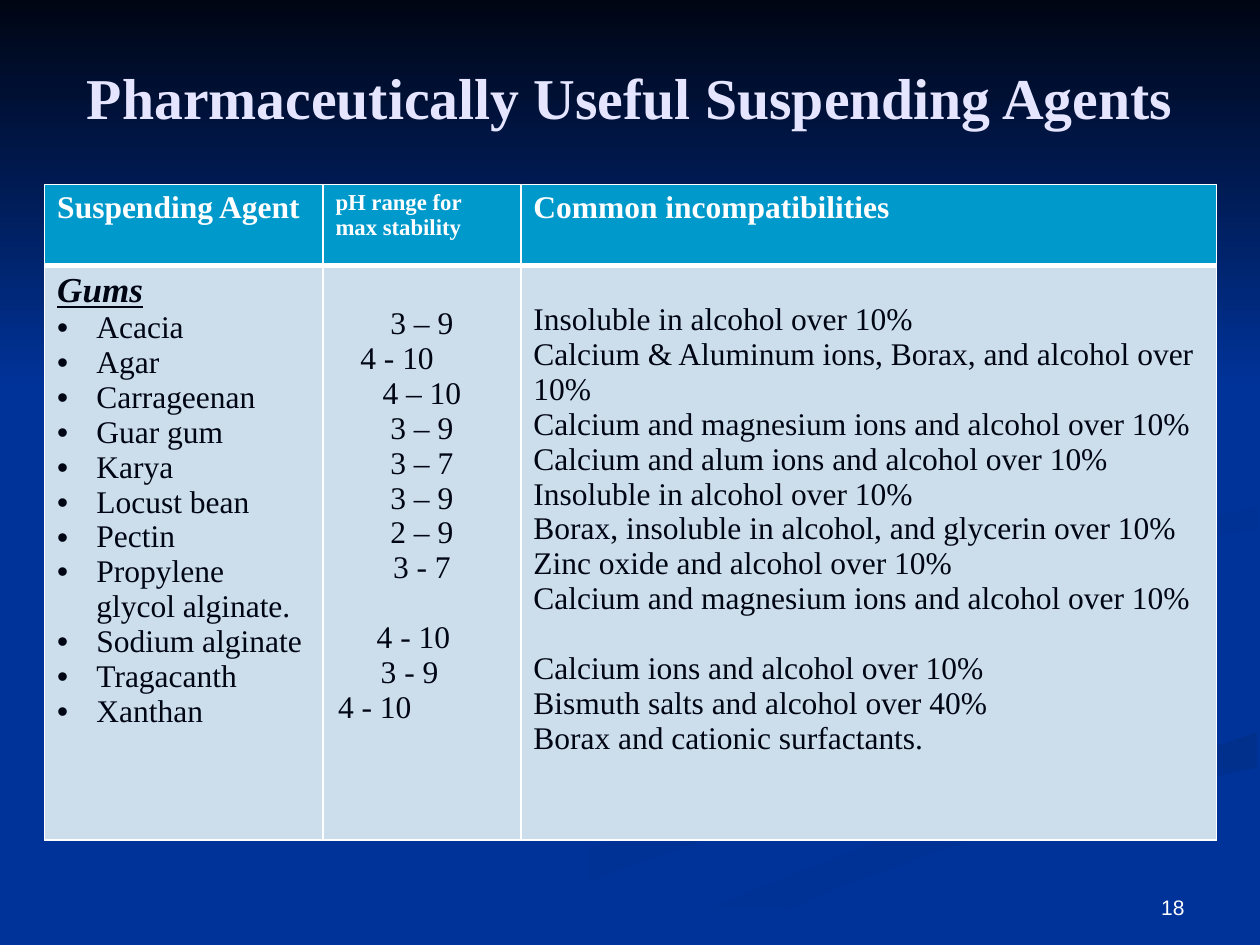
import pptx
import pptx.dml.color
import pptx.enum.dml
import pptx.enum.shapes
import pptx.enum.text
import pptx.oxml
import pptx.oxml.ns
import pptx.util
from pptx.util import Cm, Pt

SERIF = "Times New Roman"
WHITE, INK, TITLE = "FFFFFF", "000514", "E5E5FF"
NAVY, TEAL, PALE = "003399", "0099CC", "CCDEEC"
ALIGN = pptx.enum.text.PP_ALIGN
ANCHOR = pptx.enum.text.MSO_ANCHOR
LINE = 19.9  # height in points of one 18 pt line

HEADERS = [("Suspending Agent", 18), ("pH range for max stability", 13),
           ("Common incompatibilities", 18)]
GUMS = ["Acacia", "Agar", "Carrageenan", "Guar gum", "Karya", "Locust bean",
        "Pectin", "Propylene glycol alginate.", "Sodium alginate",
        "Tragacanth", "Xanthan"]
# Range and left indent in cm; None means centred
PH_RANGES = [("3 – 9", None), ("4 - 10", 0.5), ("4 – 10", None),
             ("3 – 9", None), ("3 – 7", None), ("3 – 9", None),
             ("2 – 9", None), ("3 - 7", None), ("4 - 10", 0.83),
             ("3 - 9", 0.91), ("4 - 10", 0.05)]
INCOMPATIBILITIES = [
    "Insoluble in alcohol over 10%",
    "Calcium & Aluminum ions, Borax, and alcohol over 10%",
    "Calcium and magnesium ions and alcohol over 10%",
    "Calcium and alum ions and alcohol over 10%",
    "Insoluble in alcohol over 10%",
    "Borax, insoluble in alcohol, and glycerin over 10%",
    "Zinc oxide and alcohol over 10%",
    "Calcium and magnesium ions and alcohol over 10%",
    "Calcium ions and alcohol over 10%",
    "Bismuth salts and alcohol over 40%",
    "Borax and cationic surfactants."]
AFTER_GAP = 8  # this entry follows the two-line gum name

# Backdrop outlines in cm: points, start colour, end colour, angle
BACKDROP = [
    ([(7.62, 19.02), (10.59, 17.53), (13.69, 16.48), (18.19, 15.47),
      (19.81, 14.83), (19.94, 14.38), (19.69, 14.04), (20.09, 14.12),
      (20.32, 14.76), (19.81, 15.37), (17.17, 16.1), (14.33, 16.89),
      (11.84, 17.78), (9.17, 19.02)], NAVY, "003193", 0),
    ([(12.78, 19.02), (15.21, 17.93), (17.68, 16.99), (20.24, 16.23),
      (23.77, 15.29), (25.35, 14.76), (25.35, 15.47), (22.94, 16),
      (19.94, 16.79), (17.02, 17.83), (15.24, 18.62), (14.5, 19.02)],
     "002F8C", NAVY, 270),
    ([(19.84, 11.68), (20.29, 11.23), (21.21, 10.92), (22.83, 10.62),
      (24.56, 10.39), (25.35, 10.21), (25.35, 10.67), (23.77, 10.9),
      (21.82, 11.25), (20.73, 11.66), (20.45, 12.09), (20.98, 12.6),
      (20.24, 12.27)], "003091", NAVY, 315),
    ([(0, 0), (25.4, 0), (25.4, 7.82), (0, 7.82)], INK, NAVY, 270),
]


def color(value):
    return pptx.dml.color.RGBColor.from_string(value)


def style(para, size, value, font=SERIF, bold=False, italic=False,
          underline=False):
    for span in para.runs:
        span.font.name, span.font.size = font, Pt(size)
        span.font.color.rgb = color(value)
        span.font.bold, span.font.italic = bold, italic
        span.font.underline = underline


def add_backdrop(page, points, start, end, angle):
    builder = page.shapes.build_freeform(Cm(points[0][0]), Cm(points[0][1]))
    builder.add_line_segments([(Cm(x), Cm(y)) for x, y in points[1:]])
    shape = builder.convert_to_shape()
    shape.shadow.inherit = False
    shape.line.fill.background()
    shape.fill.gradient()
    shape.fill.gradient_angle = angle
    for stop, value, position in zip(shape.fill.gradient_stops,
                                     (start, end), (0, 1)):
        stop.color.rgb, stop.position = color(value), position


def add_title(page, text):
    box = page.shapes.title
    box.left, box.top, box.width, box.height = (
        Cm(1.27), Cm(0.76), Cm(22.86), Cm(2.36))
    frame = box.text_frame
    frame.text = text
    frame.auto_size = pptx.enum.text.MSO_AUTO_SIZE.NONE
    frame.vertical_anchor = ANCHOR.MIDDLE
    frame.paragraphs[0].alignment = ALIGN.CENTER
    style(frame.paragraphs[0], 33, TITLE, bold=True)
    # The title lies above the backdrop
    page.shapes._spTree.append(box._element)


def indent(para, left, hanging=0, bullet=None):
    properties = para._p.get_or_add_pPr()
    properties.set("marL", str(Cm(left)))
    properties.set("indent", str(-Cm(hanging)))
    if bullet:
        for tag, name, value in (("buFont", "typeface", "Arial"),
                                 ("buChar", "char", bullet)):
            element = pptx.oxml.parse_xml(
                f'<a:{tag} {pptx.oxml.ns.nsdecls("a")} {name}="{value}"/>')
            properties.append(element)


def format_cell(cell, fill, top=1, bottom=1):
    properties = cell._tc.get_or_add_tcPr()
    for side, width in (("L", 1), ("R", 1), ("T", top), ("B", bottom)):
        properties.append(pptx.oxml.parse_xml(
            f'<a:ln{side} {pptx.oxml.ns.nsdecls("a")} w="{Pt(width)}">'
            f'<a:solidFill><a:srgbClr val="{WHITE}"/></a:solidFill>'
            f'</a:ln{side}>'))
    cell.fill.solid()
    cell.fill.fore_color.rgb = color(fill)


def fill_list(cell, lines):
    cell.text_frame.text = "\n".join(lines)
    for para in cell.text_frame.paragraphs:
        style(para, 18, INK)
    return cell.text_frame.paragraphs


def add_agent_table(page):
    table = page.shapes.add_table(2, 3, Cm(0.9), Cm(3.72), Cm(23.62),
                                  Cm(13.21)).table
    table.horz_banding = False
    for column, width in zip(table.columns, (5.61, 3.99, 14.02)):
        column.width = Cm(width)
    for row, height in zip(table.rows, (1.63, 11.58)):
        row.height = Cm(height)

    # Header row
    for cell, (text, size) in zip(table.rows[0].cells, HEADERS):
        cell.text_frame.text = text
        style(cell.text_frame.paragraphs[0], size, WHITE, bold=True)
        format_cell(cell, TEAL, bottom=3)

    # Gums, their pH ranges and incompatibilities
    agents, ranges, clashes = table.rows[1].cells
    heading, *names = fill_list(agents, ["Gums"] + GUMS)
    style(heading, 20, INK, bold=True, italic=True, underline=True)
    for para in names:
        indent(para, 0.79, 0.79, "•")

    range_paras = fill_list(ranges, [text for text, _ in PH_RANGES])
    for para, (_, left) in zip(range_paras, PH_RANGES):
        if left is None:
            para.alignment = ALIGN.CENTER
        else:
            indent(para, left)
    clash_paras = fill_list(clashes, INCOMPATIBILITIES)
    for paras in (range_paras, clash_paras):
        paras[AFTER_GAP].space_before = Pt(LINE)
    ranges.margin_top, clashes.margin_top = Cm(0.83), Cm(0.75)
    for cell in (agents, ranges, clashes):
        format_cell(cell, PALE, top=3)


def add_page_number(page, text):
    box = page.shapes.add_textbox(Cm(18.2), Cm(17.35), Cm(5.93), Cm(1.32))
    frame = box.text_frame
    frame.word_wrap = True
    frame.vertical_anchor = ANCHOR.BOTTOM
    frame.text = text
    frame.paragraphs[0].alignment = ALIGN.RIGHT
    style(frame.paragraphs[0], 12, WHITE, font="Arial")


def main():
    deck = pptx.Presentation()
    deck.slide_width, deck.slide_height = Cm(25.4), Cm(19.05)
    page = deck.slides.add_slide(deck.slide_layouts[5])
    page.background.fill.solid()
    page.background.fill.fore_color.rgb = color(NAVY)
    for outline in BACKDROP:
        add_backdrop(page, *outline)
    add_title(page, "Pharmaceutically Useful Suspending Agents")
    add_agent_table(page)
    add_page_number(page, "18")
    deck.save("out.pptx")


if __name__ == "__main__":
    main()
